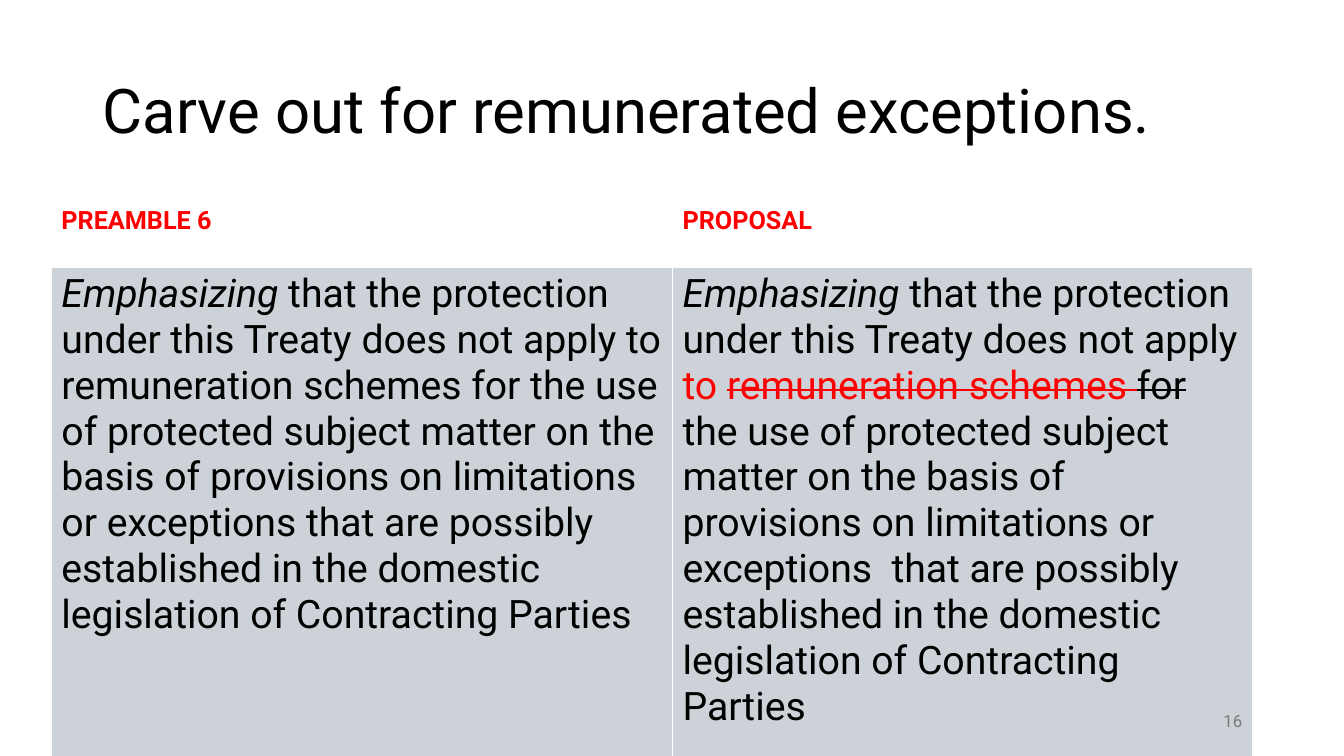
from lxml import etree
from pptx import Presentation
from pptx.dml.color import RGBColor
from pptx.enum import text
from pptx.oxml import ns
from pptx.util import Inches, Pt

FONT = "Roboto"
BLACK, RED, GREY, WHITE = "000000", "FF0000", "797979", "FFFFFF"
ROW_FILLS = [None, "CCD2D8", "E8EAED", "CCD2D8"]
ROW_HEIGHTS = [0.64, 4.9, 0.64, 0.64]
COLUMN_WIDTHS = [6.16, 5.75]

HEADING = {"size": Pt(18), "bold": True}
BODY = {"size": Pt(28), "bold": False}
OPENING = "that the protection under this Treaty does not apply "
ENDING = "that are possibly established in the domestic legislation of Contracting Parties"
BASIS = "the use of protected subject matter on the basis of provisions on limitations or exceptions "

CELL_RUNS = {
    (0, 0): [("PREAMBLE 6", RED, HEADING, False)],
    (0, 1): [("PROPOSAL", RED, HEADING, False)],
    (1, 0): [
        ("Emphasizing", BLACK, {**BODY, "italic": True}, False),
        (f" {OPENING}to remuneration schemes for {BASIS}{ENDING}", BLACK, BODY, False),
    ],
    (1, 1): [
        ("Emphasizing", BLACK, {**BODY, "italic": True}, False),
        (f" {OPENING}", BLACK, BODY, False),
        ("to ", RED, BODY, False),
        ("remuneration schemes ", RED, BODY, True),
        ("for ", BLACK, BODY, True),
        (f"{BASIS} {ENDING}", BLACK, BODY, False),
    ],
}


def color(value):
    return RGBColor.from_string(value)


def set_format(target, values):
    for name, value in values.items():
        setattr(target, name, value)


def add_run(paragraph, wording, fill, font_format, strike=False):
    run = paragraph.add_run()
    run.text = wording
    set_format(run.font, {"name": FONT, **font_format})
    run.font.color.rgb = color(fill)
    if strike:
        run._r.get_or_add_rPr().set("strike", "sngStrike")


def place(shape, left, top, width, height):
    set_format(shape, {"left": Inches(left), "top": Inches(top),
                       "width": Inches(width), "height": Inches(height)})


def write_line(shape, wording, fill, font_format, paragraph_format):
    set_format(shape.text_frame, {"word_wrap": True,
                                  "vertical_anchor": text.MSO_ANCHOR.MIDDLE})
    paragraph = shape.text_frame.paragraphs[0]
    set_format(paragraph, paragraph_format)
    add_run(paragraph, wording, fill, font_format)


def set_borders(cell, bottom_width):
    properties = cell._tc.get_or_add_tcPr()
    widths = {"lnL": 1, "lnR": 1, "lnT": 1, "lnB": bottom_width}
    for index, (side, width) in enumerate(widths.items()):
        line = etree.Element(ns.qn(f"a:{side}"), w=str(Pt(width)))
        fill = etree.SubElement(line, ns.qn("a:solidFill"))
        etree.SubElement(fill, ns.qn("a:srgbClr"), val=WHITE)
        properties.insert(index, line)


def add_comparison(slide):
    frame = slide.shapes.add_table(
        len(ROW_HEIGHTS), len(COLUMN_WIDTHS), Inches(0.51), Inches(2),
        Inches(sum(COLUMN_WIDTHS)), Inches(sum(ROW_HEIGHTS)))
    table = frame.table
    for column, width in zip(table.columns, COLUMN_WIDTHS):
        column.width = Inches(width)
    for row_index, (row, height) in enumerate(zip(table.rows, ROW_HEIGHTS)):
        row.height = Inches(height)
        for column_index, cell in enumerate(row.cells):
            row_fill = ROW_FILLS[row_index]
            if row_fill:
                cell.fill.solid()
                cell.fill.fore_color.rgb = color(row_fill)
            else:
                cell.fill.background()
            set_borders(cell, 1 if row_index else 3)
            paragraph = cell.text_frame.paragraphs[0]
            for run in CELL_RUNS.get((row_index, column_index), []):
                add_run(paragraph, *run)


def main():
    presentation = Presentation()
    set_format(presentation, {"slide_width": Inches(13.33), "slide_height": Inches(7.5)})
    slide = presentation.slides.add_slide(presentation.slide_layouts[5])

    title = slide.shapes.title
    place(title, 0.92, 0.4, 11.5, 1.45)
    write_line(title, "Carve out for remunerated exceptions.", BLACK, {"size": Pt(44)},
               {"alignment": text.PP_ALIGN.LEFT, "line_spacing": 0.9})

    add_comparison(slide)

    number = slide.shapes.add_textbox(Inches(9.42), Inches(6.95), Inches(3), Inches(0.4))
    write_line(number, "16", GREY, {"size": Pt(12)}, {"alignment": text.PP_ALIGN.RIGHT})

    presentation.save("out.pptx")


if __name__ == "__main__":
    main()
